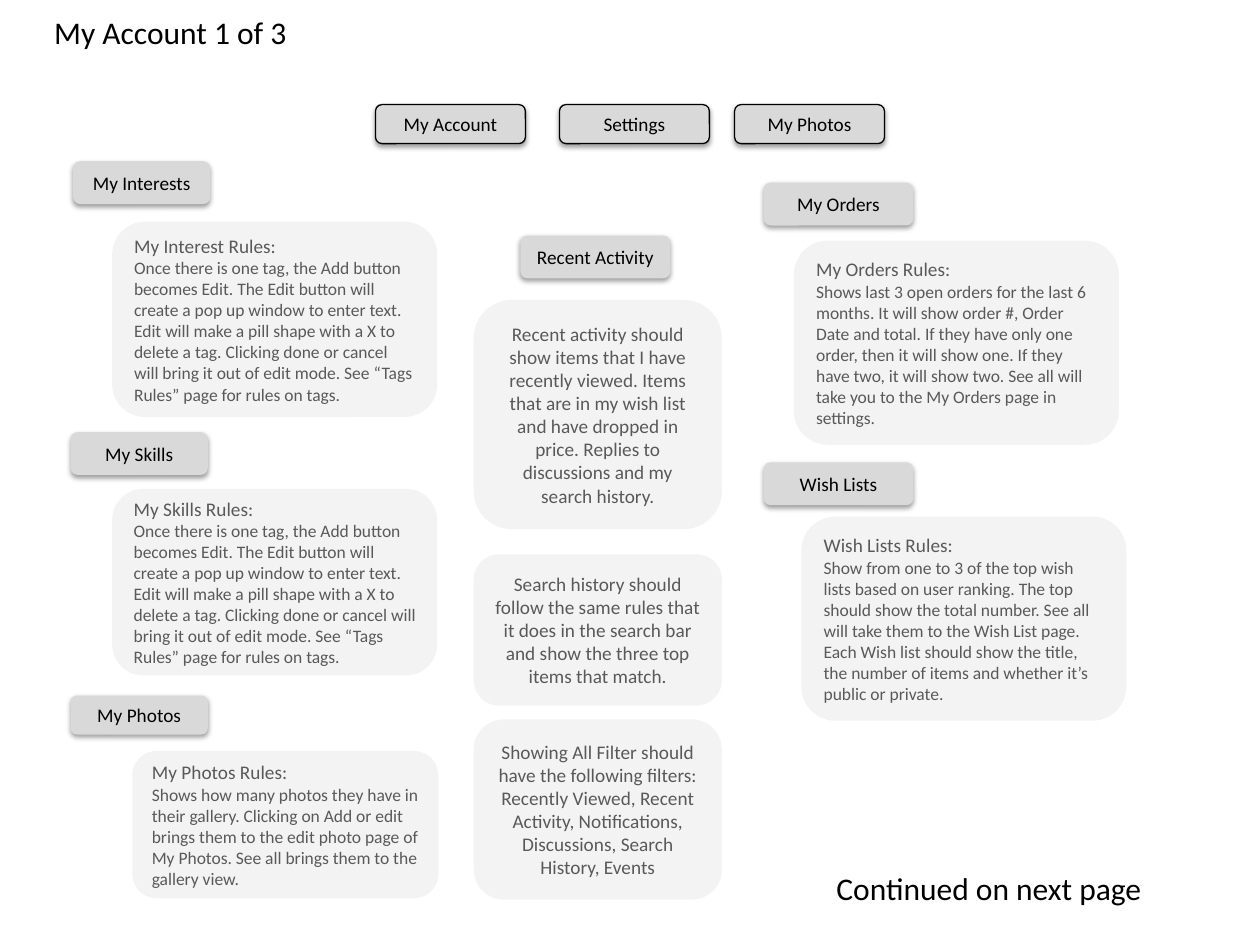
from lxml import etree
from pptx import Presentation
from pptx.dml.color import RGBColor
from pptx.enum import shapes, text
from pptx.oxml import parse_xml
from pptx.util import Inches, Pt

BLACK = RGBColor(0x00, 0x00, 0x00)
TEXT_GREY = RGBColor(0x59, 0x59, 0x59)
BUTTON_GREY = RGBColor(0xD9, 0xD9, 0xD9)
PANEL_GREY = RGBColor(0xF3, 0xF3, 0xF3)
LEFT, CENTER = text.PP_ALIGN.LEFT, text.PP_ALIGN.CENTER

# Soft shadow straight below a button
SHADOW = (
    '<a:effectLst xmlns:a="http://schemas.openxmlformats.org/drawingml/2006/main">'
    f'<a:outerShdw blurRad="{Pt(3.1)}" dist="{Pt(1.6)}" dir="5400000" rotWithShape="0">'
    '<a:srgbClr val="000000"><a:alpha val="38000"/></a:srgbClr>'
    '</a:outerShdw></a:effectLst>'
)


def write(tf, lines, sizes, color=BLACK, align=LEFT, anchor=text.MSO_ANCHOR.MIDDLE, wrap=True):
    tf.word_wrap = wrap
    tf.vertical_anchor = anchor
    for i, (line, size) in enumerate(zip(lines, sizes)):
        p = tf.paragraphs[0] if i == 0 else tf.add_paragraph()
        p.alignment = align
        r = p.add_run()
        r.text = line
        r.font.name = "Calibri"
        r.font.size = Pt(size)
        r.font.color.rgb = color


def add_box(box, fill, outlined=False):
    sp = s.shapes.add_shape(shapes.MSO_SHAPE.ROUNDED_RECTANGLE, *map(Inches, box))
    sp.shadow.inherit = False
    sp.fill.solid()
    sp.fill.fore_color.rgb = fill
    if outlined:
        sp.line.color.rgb = BLACK
        sp.line.width = Pt(0.75)
    else:
        sp.line.fill.background()
    return sp


prs = Presentation()
prs.slide_width, prs.slide_height = Inches(10), Inches(7.5)
s = prs.slides.add_slide(prs.slide_layouts[5])

# Title
title = s.shapes.title
title.left, title.top, title.width, title.height = map(Inches, (0.33, 0.03, 3.13, 0.45))
write(title.text_frame, ["My Account 1 of 3"], [18])

# Navigation tabs (outlined) and section headings
buttons = [
    ("My Account", 2.98, 0.83, 1.19, 0.31, True),
    ("Settings", 4.44, 0.83, 1.19, 0.31, True),
    ("My Photos", 5.83, 0.83, 1.19, 0.31, True),
    ("My Interests", 0.58, 1.28, 1.09, 0.34, False),
    ("My Skills", 0.56, 3.43, 1.09, 0.34, False),
    ("My Photos", 0.56, 5.52, 1.09, 0.31, False),
    ("Recent Activity", 4.13, 1.87, 1.19, 0.34, False),
    ("My Orders", 6.06, 1.45, 1.19, 0.34, False),
    ("Wish Lists", 6.06, 3.67, 1.19, 0.34, False),
]
for label, *box, outlined in buttons:
    sp = add_box(box, BUTTON_GREY, outlined)
    effects = sp._element.spPr.find("{*}effectLst")
    effects.getparent().replace(effects, parse_xml(SHADOW))
    write(sp.text_frame, [label], [11], align=CENTER)

# Rule panels in the outer columns: heading and smaller body
TAG_RULES = (
    "Once there is one tag, the Add button becomes Edit. The Edit button will create a "
    "pop up window to enter text. Edit will make a pill shape with a X to delete a tag. "
    "Clicking done or cancel will bring it out of edit mode. See “Tags Rules” page for "
    "rules on tags."
)
rules = [
    ((0.89, 1.76, 2.58, 1.55), "My Interest Rules:", TAG_RULES),
    ((0.89, 3.88, 2.58, 1.48), "My Skills Rules:", TAG_RULES),
    ((1.05, 5.96, 2.43, 1.17), "My Photos Rules:",
     "Shows how many photos they have in their gallery. Clicking on Add or edit brings "
     "them to the edit photo page of My Photos. See all brings them to the gallery view."),
    ((6.3, 1.91, 2.58, 1.62), "My Orders Rules:",
     "Shows last 3 open orders for the last 6 months. It will show order #, Order Date "
     "and total. If they have only one order, then it will show one. If they have two, "
     "it will show two. See all will take you to the My Orders page in settings."),
    ((6.36, 4.1, 2.58, 1.62), "Wish Lists Rules:",
     "Show from one to 3 of the top wish lists based on user ranking. The top should "
     "show the total number. See all will take them to the Wish List page. Each Wish "
     "list should show the title, the number of items and whether it’s public or private."),
]
for box, heading, body in rules:
    sp = add_box(box, PANEL_GREY)
    write(sp.text_frame, [heading, body], [11, 10], color=TEXT_GREY)

# Centred panels in the middle column
activity = [
    (2.38, 1.82, [
        "Recent activity should show items that I have recently viewed. Items that are in "
        "my wish list and have dropped in price. Replies to discussions and my search history."]),
    (4.4, 1.2, [
        "Search history should follow the same rules that it does in the search bar and "
        "show the three top items that match."]),
    (5.71, 1.43, [
        "Showing All Filter should have the following filters:",
        "Recently Viewed, Recent Activity, Notifications, Discussions, Search History, Events"]),
]
for top, height, lines in activity:
    sp = add_box((3.76, top, 1.97, height), PANEL_GREY)
    write(sp.text_frame, lines, [11] * len(lines), color=TEXT_GREY, align=CENTER)

# Continuation note
note = s.shapes.add_textbox(*map(Inches, (6.54, 6.85, 2.65, 0.95)))
write(note.text_frame, ["Continued on next page"], [18], anchor=text.MSO_ANCHOR.TOP, wrap=False)
note.text_frame.auto_size = text.MSO_AUTO_SIZE.SHAPE_TO_FIT_TEXT

prs.save("out.pptx")
